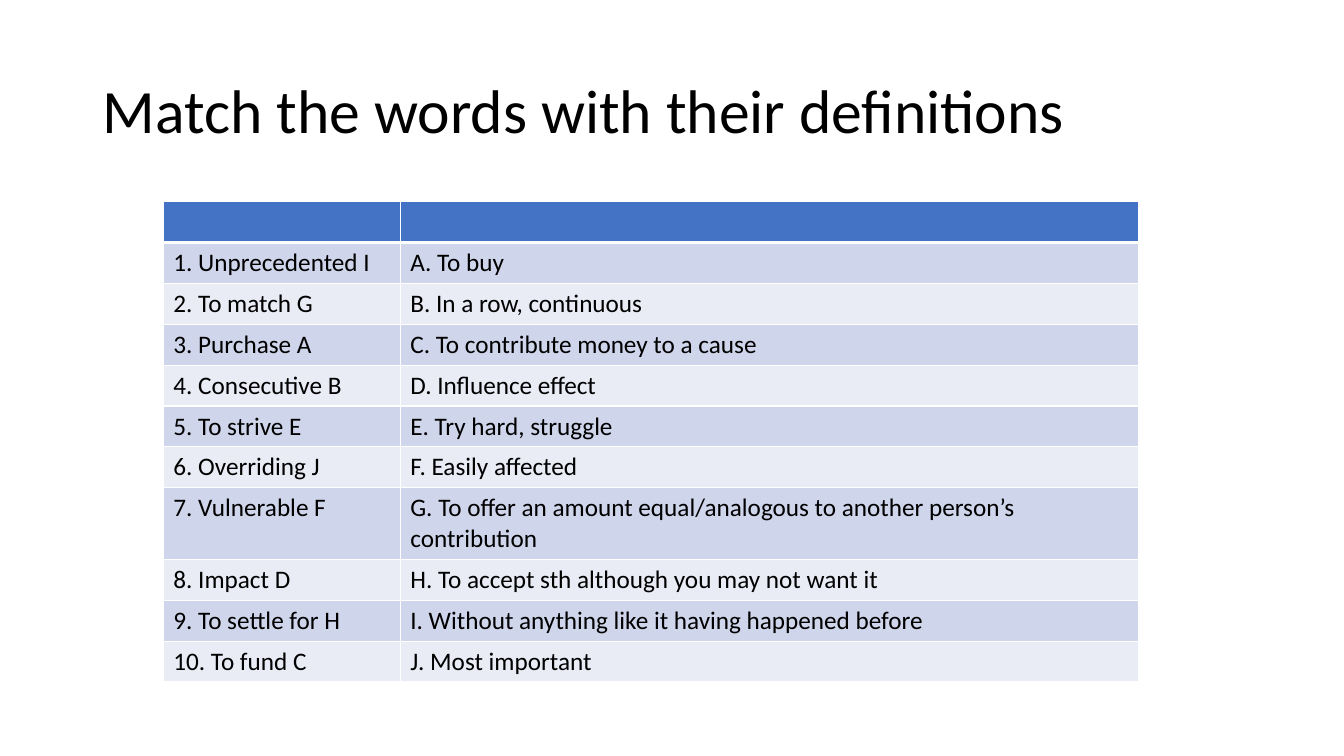
from lxml import etree
from pptx import Presentation
from pptx.dml.color import RGBColor
from pptx.enum.text import MSO_ANCHOR, PP_ALIGN
from pptx.oxml.ns import qn
from pptx.util import Inches, Pt

LEFT = PP_ALIGN.LEFT
MIDDLE = MSO_ANCHOR.MIDDLE
FONT = "Calibri"
COLOURS = {
    "text": "000000",
    "header": "4472C4",
    "odd": "CFD5EA",
    "even": "E9EBF5",
    "border": "FFFFFF",
}
MATCHES = [
    ("1. Unprecedented I", "A. To buy"),
    ("2. To match G", "B. In a row, continuous"),
    ("3. Purchase A", "C. To contribute money to a cause"),
    ("4. Consecutive B", "D. Influence effect"),
    ("5. To strive E", "E. Try hard, struggle"),
    ("6. Overriding J", "F. Easily affected"),
    ("7. Vulnerable F", "G. To offer an amount equal/analogous to another person’s contribution"),
    ("8. Impact D", "H. To accept sth although you may not want it"),
    ("9. To settle for H", "I. Without anything like it having happened before"),
    ("10. To fund C", "J. Most important"),
]


def add_run(paragraph, text, size):
    run = paragraph.add_run()
    run.text = text
    run.font.name = FONT
    run.font.size = Pt(size)
    run.font.bold = False
    run.font.color.rgb = RGBColor.from_string(COLOURS["text"])


def set_borders(cell, top, bottom):
    properties = cell._tc.get_or_add_tcPr()
    for side, width in (("L", 1), ("R", 1), ("T", top), ("B", bottom)):
        line = etree.SubElement(properties, qn(f"a:ln{side}"), w=str(Pt(width)))
        fill = etree.SubElement(line, qn("a:solidFill"))
        etree.SubElement(fill, qn("a:srgbClr"), val=COLOURS["border"])


prs = Presentation()
prs.slide_width = Inches(13.33)
prs.slide_height = Inches(7.5)
slide = prs.slides.add_slide(prs.slide_layouts[5])

title = slide.shapes.title
title.left, title.top = Inches(0.92), Inches(0.4)
title.width, title.height = Inches(11.5), Inches(1.45)
title.text_frame.vertical_anchor = MIDDLE
heading = title.text_frame.paragraphs[0]
heading.alignment = LEFT
heading.line_spacing = 0.9
add_run(heading, "Match the words with their definitions", 44)

rows = [("", "")] + MATCHES
table_frame = slide.shapes.add_table(
    len(rows), 2, Inches(1.62), Inches(2), Inches(9.67), Inches(4.46)
)
matching_table = table_frame.table
for column, width in zip(matching_table.columns, (2.35, 7.32)):
    column.width = Inches(width)
table_frame.height = Inches(4.76)

for row_number, entries in enumerate(rows):
    band = "header" if row_number == 0 else "odd" if row_number % 2 else "even"
    for column_number, entry in enumerate(entries):
        cell = matching_table.cell(row_number, column_number)
        set_borders(cell, 3 if row_number == 1 else 1, 3 if row_number == 0 else 1)
        cell.fill.solid()
        cell.fill.fore_color.rgb = RGBColor.from_string(COLOURS[band])
        if entry:
            add_run(cell.text_frame.paragraphs[0], entry, 18)

prs.save("out.pptx")
